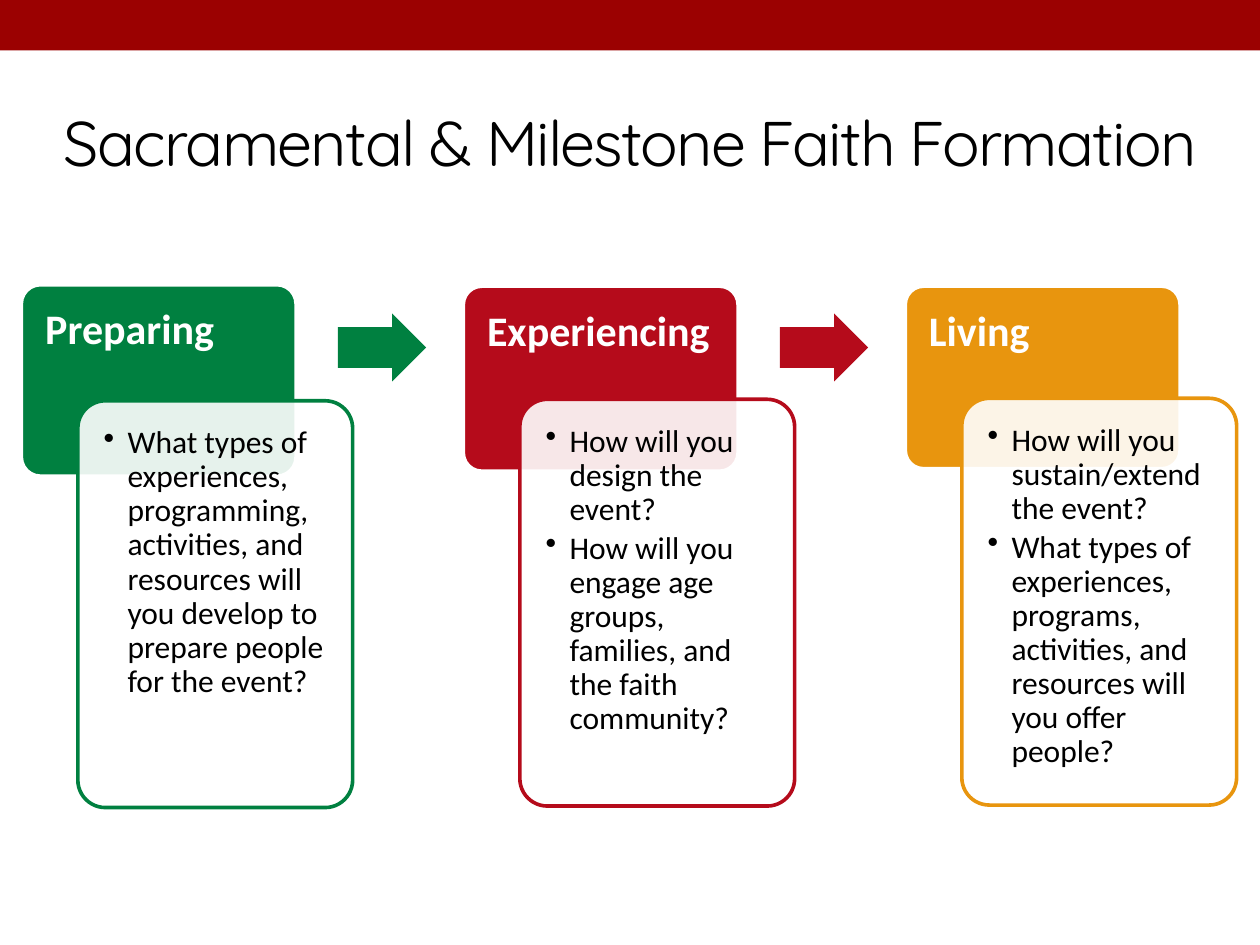
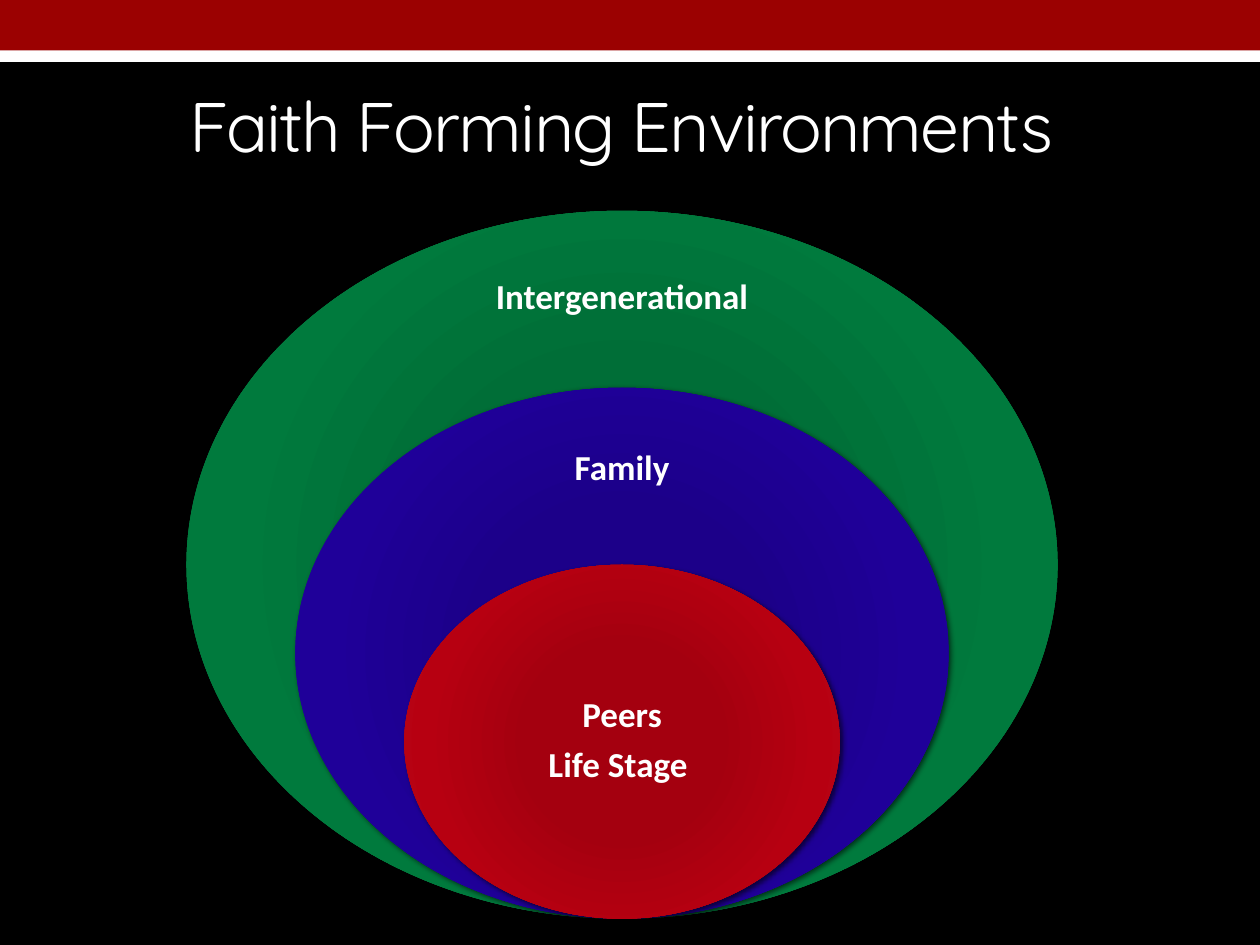
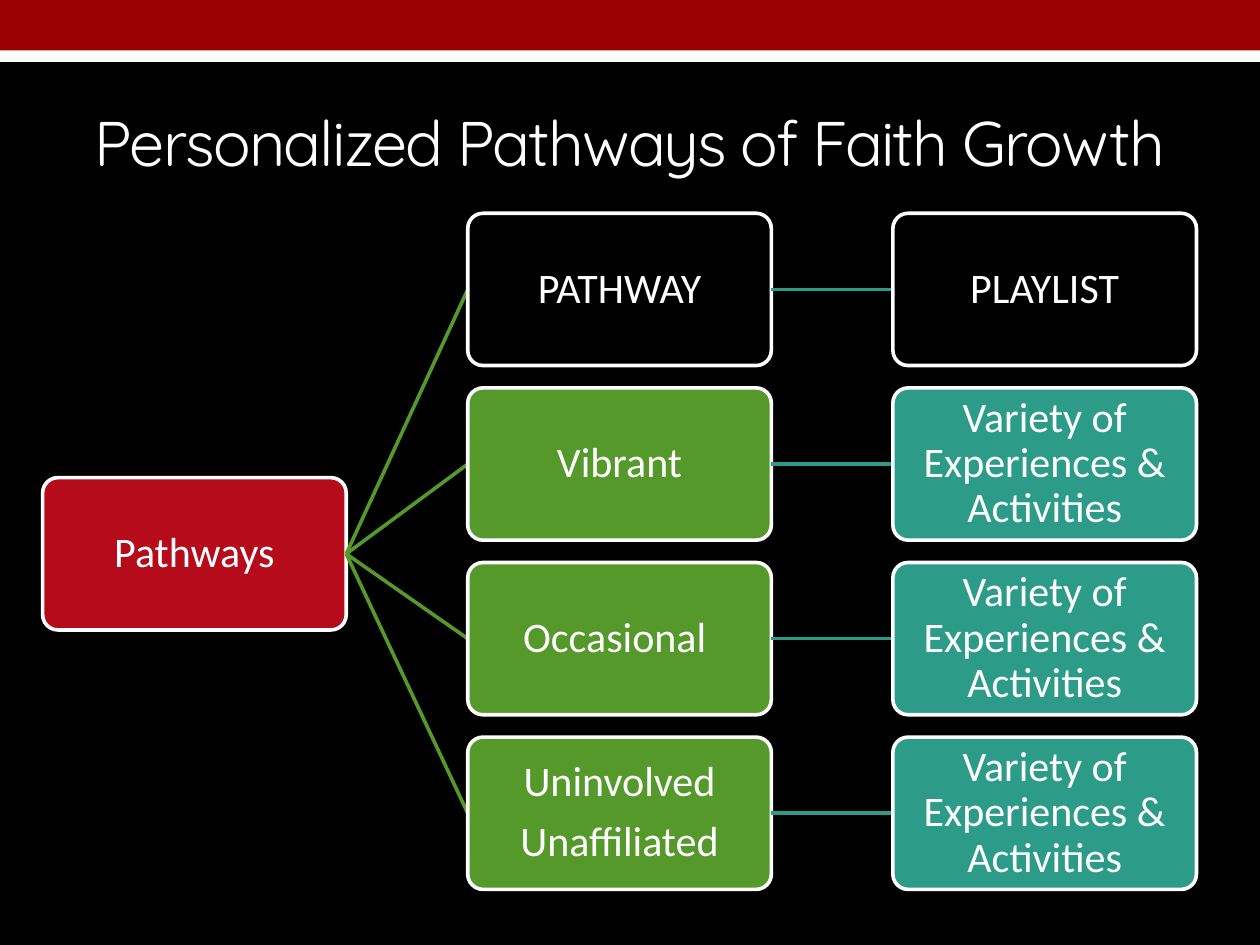
"""Build three slides on faith formation: stages, environments and pathways."""
from dataclasses import dataclass

from lxml import etree
from pptx import Presentation
from pptx import util as u
from pptx.dml.color import RGBColor
from pptx.enum import shapes, text
from pptx.oxml.ns import qn


@dataclass(frozen=True)
class Theme:
    band: str = "9B0101"
    white: str = "FFFFFF"
    black: str = "000000"
    green: str = "008040"
    red: str = "B50B1B"
    amber: str = "E8950E"
    leaf: str = "55992B"
    teal: str = "2C9C89"
    title_font: str = "Quicksand"
    body_font: str = "Calibri"
    title_size: int = 36
    big_title_size: int = 40
    heading_size: int = 24
    label_size: int = 20
    body_size: int = 18
    outline: float = 2.08


theme = Theme()
preset = shapes.MSO_SHAPE
anchors = text.MSO_ANCHOR
aligns = text.PP_ALIGN


def draw(slide, kind, box, fill=None, outline=None):
    part = slide.shapes.add_shape(kind, *(u.Cm(length) for length in box))
    part.shadow.inherit = False
    if kind == preset.ROUNDED_RECTANGLE:
        part.adjustments[0] = 0.1
    if fill:
        part.fill.solid()
        part.fill.fore_color.rgb = RGBColor.from_string(fill)
    else:
        part.fill.background()
    if outline:
        part.line.color.rgb = RGBColor.from_string(outline)
        part.line.width = u.Pt(theme.outline)
    else:
        part.line.fill.background()
    return part


def write(part, lines, size, ink=theme.white, font=theme.body_font, bold=False,
          align=aligns.CENTER, anchor=anchors.MIDDLE, inset=0.05,
          leading=0.9, after=0.35, bullet=False, spacing=None):
    frame = part.text_frame
    frame.word_wrap = True
    frame.vertical_anchor = anchor
    frame.margin_left = frame.margin_right = u.Cm(inset)
    frame.margin_top = frame.margin_bottom = u.Cm(inset)
    for index, line in enumerate(lines):
        paragraph = frame.add_paragraph() if index else frame.paragraphs[0]
        if bullet:
            properties = paragraph._p.get_or_add_pPr()
            properties.set("marL", str(u.Cm(0.48)))
            properties.set("indent", str(u.Cm(-0.48)))
            etree.SubElement(properties, qn("a:buChar"), char="•")
        paragraph.alignment = align
        paragraph.line_spacing = leading
        paragraph.space_after = u.Pt(size * after)
        run = paragraph.add_run()
        run.text = line
        run.font.name = font
        run.font.size = u.Pt(size)
        run.font.bold = bold
        run.font.color.rgb = RGBColor.from_string(ink)
        if spacing:
            run._r.get_or_add_rPr().set("spc", str(spacing))


deck = Presentation()
deck.slide_width, deck.slide_height = u.Cm(25.4), u.Cm(19.05)

pages = []
for heading, size, top, ground, ink in [
    ("Sacramental & Milestone Faith Formation", theme.title_size, 1.47, theme.white, theme.black),
    ("Faith Forming Environments ", theme.big_title_size, 1.14, theme.black, theme.white),
    ("Personalized Pathways of Faith Growth", theme.title_size, 1.47, theme.black, theme.white),
]:
    page = deck.slides.add_slide(deck.slide_layouts[6])
    page.background.fill.solid()
    page.background.fill.fore_color.rgb = RGBColor.from_string(ground)
    if ground == theme.black:
        draw(page, preset.RECTANGLE, (0, 0.61, 25.4, 0.64), theme.white)
    draw(page, preset.RECTANGLE, (0, 0, 25.4, 1.02), theme.band)
    title = page.shapes.add_textbox(u.Cm(0), u.Cm(top), u.Cm(25.4), u.Cm(2.74))
    write(title, [heading], size, ink, theme.title_font, inset=0.13,
          leading=1, after=0, spacing=-100)
    pages.append(page)
formation, environments, pathways = pages

stages = [
    ("Preparing", theme.green, 5.74, 3.86, 8.08,
     ["What types of experiences, programming, activities, and resources will you "
      "develop to prepare people for the event?"]),
    ("Experiencing", theme.red, 5.77, 3.73, 8.05,
     ["How will you design the event?",
      "How will you engage age groups, families, and the faith community?"]),
    ("Living", theme.amber, 5.77, 3.68, 8.03,
     ["How will you sustain/extend the event?",
      "What types of experiences, programs, activities, and resources will you offer people?"]),
]
for index, (stage, hue, top, height, question_top, questions) in enumerate(stages):
    left = 0.43 + 8.91 * index
    header = draw(formation, preset.ROUNDED_RECTANGLE, (left, top, 5.54, height), hue, theme.white)
    write(header, [stage], theme.heading_size, bold=True, align=aligns.LEFT,
          anchor=anchors.TOP, inset=0.37)
    card = draw(formation, preset.ROUNDED_RECTANGLE, (left + 1.14, question_top, 5.54, 8.2),
                theme.white, hue)
    tint = card._element.spPr.find(qn("a:solidFill"))[0]
    etree.SubElement(tint, qn("a:alpha"), val="90000")
    write(card, questions, theme.body_size, theme.black, align=aligns.LEFT,
          anchor=anchors.TOP, inset=0.36, after=0.15, bullet=True)
    if index < len(stages) - 1:
        arrow = draw(formation, preset.RIGHT_ARROW, (left + 6.38, 6.32, 1.78, 1.37), hue)
        arrow.adjustments[0], arrow.adjustments[1] = 0.6, 0.5

center, floor = 12.54, 18.52
circles = [
    (["Intergenerational"], 1, 4.95, 2.13, ("006E37", "006E37", "007A3D", theme.green)),
    (["Family"], 0.75, 8.46, 2.01, ("1C0089", "1C0089", "1F0099", "23059B")),
    (["Peers", "Life Stage "], 0.5, 13.16, 3.56, ("A4000F", "A4000F", "B70011", theme.red)),
]
for names, scale, label_top, label_height, tones in circles:
    width, height = 17.56 * scale, 14.27 * scale
    circle = draw(environments, preset.OVAL, (center - width / 2, floor - height, width, height))
    circle.fill.gradient()
    gradient = circle._element.spPr.find(qn("a:gradFill"))
    gradient.clear()
    stops = etree.SubElement(gradient, qn("a:gsLst"))
    for position, tone in zip((0, 34, 70, 100), tones):
        stop = etree.SubElement(stops, qn("a:gs"), pos=str(position * 1000))
        etree.SubElement(stop, qn("a:srgbClr"), val=tone)
    radial = etree.SubElement(gradient, qn("a:path"), path="circle")
    etree.SubElement(radial, qn("a:fillToRect"), dict.fromkeys("ltrb", "100000"))
    effects = circle._element.spPr.find(qn("a:effectLst"))
    shade = etree.SubElement(effects, qn("a:outerShdw"), blurRad=str(u.Pt(3)),
                             dist=str(u.Pt(2)), dir="2700000")
    shade_color = etree.SubElement(shade, qn("a:srgbClr"), val=theme.black)
    etree.SubElement(shade_color, qn("a:alpha"), val="60000")
    label = environments.shapes.add_textbox(u.Cm(center - 3.08), u.Cm(label_top),
                                            u.Cm(6.16), u.Cm(label_height))
    write(label, names, theme.label_size, bold=True, inset=0.41)

box_width, box_height, column_step, row_step = 6.12, 3.07, 8.57, 3.52
first_left, first_top = 0.86, 4.3
root = draw(pathways, preset.ROUNDED_RECTANGLE, (first_left, 9.63, box_width, box_height),
            theme.red, theme.white)
write(root, ["Pathways"], theme.heading_size)

variety = ["Variety of Experiences & Activities"]
branches = [
    (["PATHWAY"], None, ["PLAYLIST"], None),
    (["Vibrant"], theme.leaf, variety, theme.teal),
    (["Occasional "], theme.leaf, variety, theme.teal),
    (["Uninvolved", "Unaffiliated"], theme.leaf, variety, theme.teal),
]
for row, (pathway, pathway_fill, playlist, playlist_fill) in enumerate(branches):
    parent = root
    for column, words, fill, link_color in [
        (1, pathway, pathway_fill, theme.leaf),
        (2, playlist, playlist_fill, theme.teal),
    ]:
        link = pathways.shapes.add_connector(shapes.MSO_CONNECTOR.STRAIGHT, 0, 0, 0, 0)
        link.line.color.rgb = RGBColor.from_string(link_color)
        link.line.width = u.Pt(theme.outline)
        etree.SubElement(link._element.spPr, qn("a:effectLst"))
        child = draw(pathways, preset.ROUNDED_RECTANGLE,
                     (first_left + column_step * column, first_top + row_step * row,
                      box_width, box_height), fill, theme.white)
        write(child, words, theme.heading_size)
        link.begin_connect(parent, 3)
        link.end_connect(child, 1)
        parent = child

deck.save("out.pptx")
